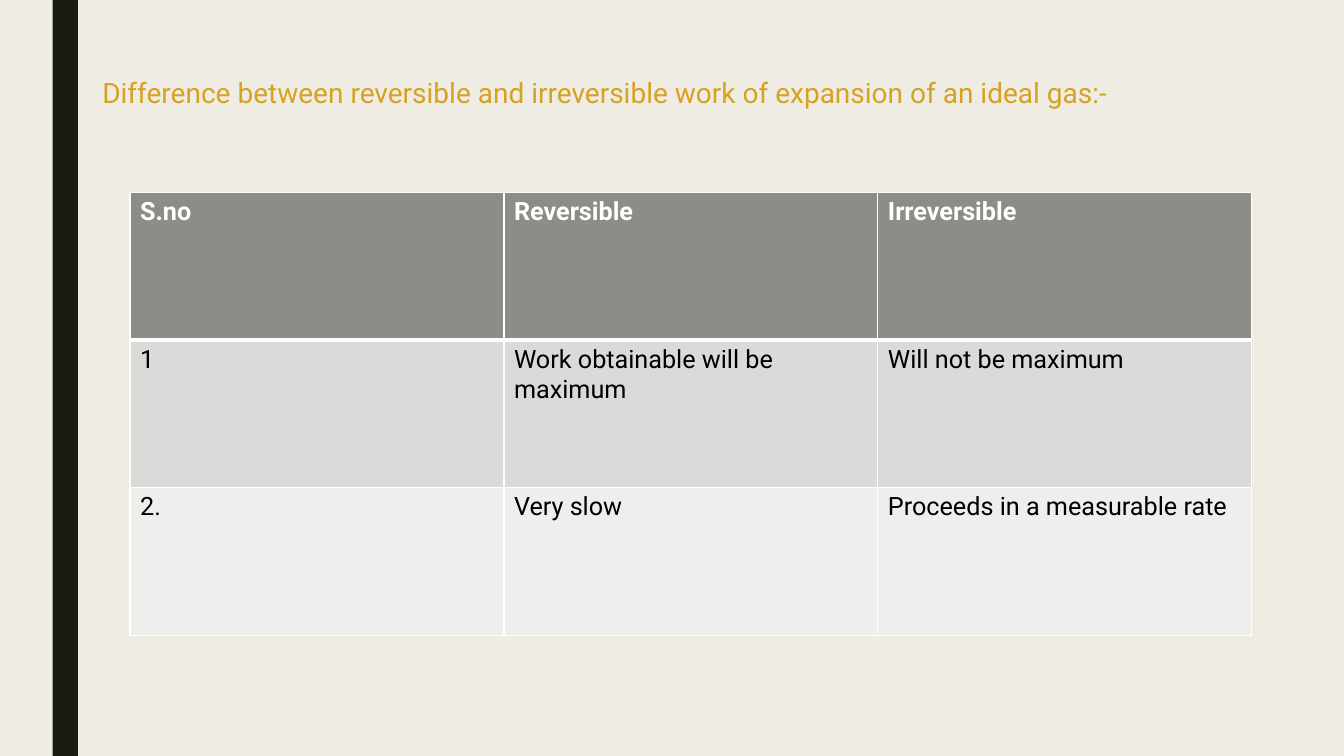
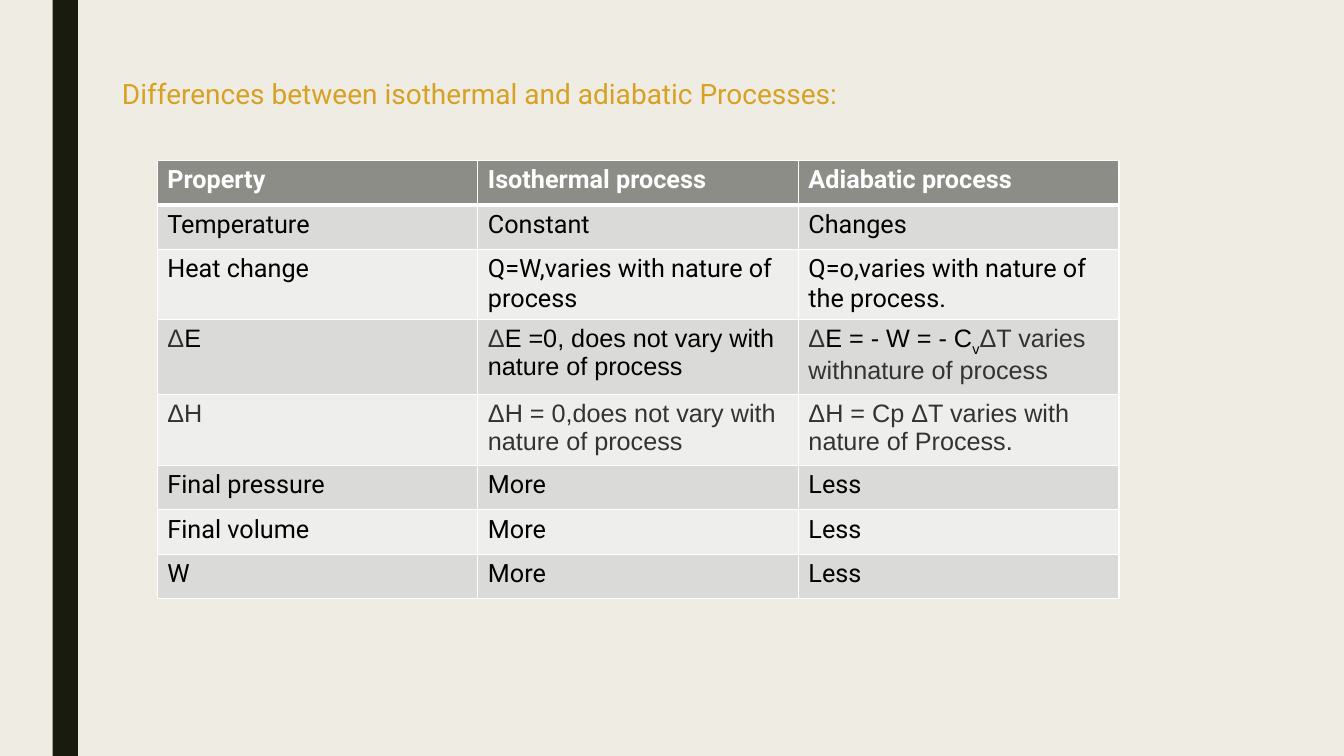
"""Build two slides that compare thermodynamic processes in tables."""
from dataclasses import dataclass

from lxml import etree
from pptx import Presentation
from pptx.dml.color import RGBColor
from pptx.enum.shapes import MSO_SHAPE
from pptx.oxml.ns import qn
from pptx.util import Pt

RECT = MSO_SHAPE.RECTANGLE


@dataclass(frozen=True)
class Theme:
    back: str = "EFEDE3"
    band: str = "191B0E"
    title: str = "D7A124"
    head: str = "8C8D86"
    odd: str = "DADBD9"
    even: str = "EEEEED"
    white: str = "FFFFFF"
    black: str = "000000"
    gray: str = "333333"
    font: str = "Roboto"
    math: str = "Arial"
    big: int = 20
    body: int = 18
    thin: int = 1
    thick: int = 3


T = Theme()
WIDE, HIGH = 960, 540

STYLES = {
    "head": (T.font, T.white, True, 0),
    "text": (T.font, T.black, False, 0),
    "math": (T.math, T.black, False, 0),
    "gray": (T.math, T.gray, False, 0),
    "sub": (T.math, T.black, False, -25000),
}

SLIDES = [
    {
        "title": "Difference between reversible and irreversible work of expansion of an ideal gas:-",
        "box": (66, 52.6, 828, 432.6),
        "grid": (92.9, 137.5, 801.3),
        "rows": [105.4] * 3,
        "cells": [
            ("S.no", "Reversible", "Irreversible"),
            ("1", "Work obtainable will be maximum", "Will not be maximum"),
            ("2.", "Very slow", "Proceeds in a measurable rate"),
        ],
    },
    {
        "title": "Differences between isothermal and adiabatic Processes:",
        "box": (80, 53.3, 842.4, 432.6),
        "grid": (112.4, 114.5, 686.9),
        "rows": [31.8] * 2 + [45] * 3 + [31.8] * 3,
        "cells": [
            ("Property", "Isothermal process", "Adiabatic process"),
            ("Temperature", "Constant", "Changes"),
            ("Heat change", "Q=W,varies with nature of process",
             "Q=o,varies with nature of the process."),
            ([("Δ", "gray"), ("E", "math")],
             [("Δ", "gray"), ("E =0, does not vary with nature of process", "math")],
             [("Δ", "gray"), ("E = - W = - C", "math"), ("v", "sub"),
              ("ΔT varies withnature of process", "gray")]),
            ([("ΔH", "gray")],
             [("ΔH = 0,does not vary with nature of process", "gray")],
             [("ΔH = Cp ΔT varies with nature of Process.", "gray")]),
            ("Final pressure", "More", "Less"),
            ("Final volume", "More", "Less"),
            ("W", "More", "Less"),
        ],
    },
]


def paint(fill, color):
    fill.solid()
    fill.fore_color.rgb = RGBColor.from_string(color)


def add_run(para, text, size, font, color, bold=False, base=0):
    run = para.add_run()
    run.text = text
    run.font.size = Pt(size)
    run.font.name = font
    run.font.bold = bold
    run.font.color.rgb = RGBColor.from_string(color)
    if base:
        run.font._element.set("baseline", str(base))


def add_edges(cell, top, base):
    props = cell._tc.get_or_add_tcPr()
    sides = (("L", T.thin), ("R", T.thin), ("T", top), ("B", base))
    for spot, (side, width) in enumerate(sides):
        line = etree.Element(qn(f"a:ln{side}"), w=str(Pt(width)))
        fill = etree.SubElement(line, qn("a:solidFill"))
        etree.SubElement(fill, qn("a:srgbClr"), val=T.white)
        props.insert(spot, line)


def add_band(slide):
    band = slide.shapes.add_shape(RECT, Pt(37.6), 0, Pt(18), Pt(HIGH))
    band.shadow.inherit = False
    paint(band.fill, T.band)
    band.line.fill.background()


def add_title(slide, text, box):
    frame = slide.shapes.add_textbox(*map(Pt, box)).text_frame
    frame.word_wrap = True
    para = frame.paragraphs[0]
    para.line_spacing = 0.94
    para.space_before = Pt(10)
    para.space_after = Pt(2)
    add_run(para, text, T.big, T.font, T.title)


def add_grid(slide, grid, rows, cells):
    left, top, width = grid
    count = len(cells[0])
    area = map(Pt, (left, top, width, sum(rows)))
    table = slide.shapes.add_table(len(rows), count, *area).table
    table.horz_banding = False
    for col in table.columns:
        col.width = Pt(width / count)
    for r, (high, line) in enumerate(zip(rows, cells)):
        table.rows[r].height = Pt(high)
        shade = T.head if r == 0 else (T.even, T.odd)[r % 2]
        for c, item in enumerate(line):
            cell = table.cell(r, c)
            paint(cell.fill, shade)
            add_edges(cell, T.thick if r == 1 else T.thin,
                      T.thick if r == 0 else T.thin)
            if isinstance(item, str):
                item = [(item, "text" if r else "head")]
            for text, style in item:
                add_run(cell.text_frame.paragraphs[0], text, T.body, *STYLES[style])


def main():
    deck = Presentation()
    deck.slide_width, deck.slide_height = Pt(WIDE), Pt(HIGH)
    paint(deck.slide_master.background.fill, T.back)
    for data in SLIDES:
        slide = deck.slides.add_slide(deck.slide_layouts[6])
        add_band(slide)
        add_title(slide, data["title"], data["box"])
        add_grid(slide, data["grid"], data["rows"], data["cells"])
    deck.save("out.pptx")


if __name__ == "__main__":
    main()
